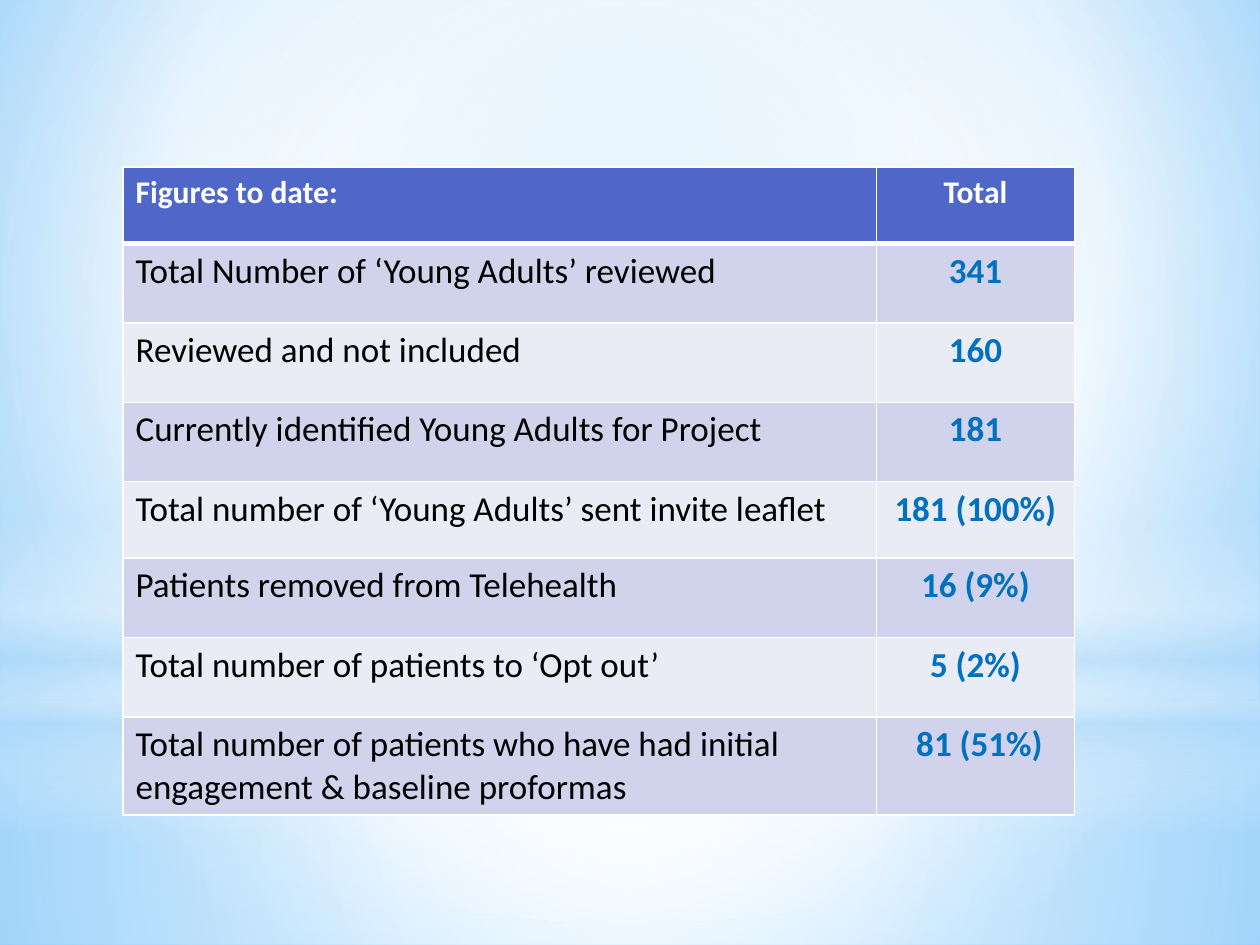
from lxml import etree
from pptx import Presentation
from pptx.dml.color import RGBColor
from pptx.enum.shapes import MSO_SHAPE
from pptx.enum.text import PP_ALIGN
from pptx.oxml import parse_xml
from pptx.oxml.ns import nsdecls, qn
from pptx.util import Cm, Pt

RECT, OVAL = MSO_SHAPE.RECTANGLE, MSO_SHAPE.OVAL
CENTER, LEFT = PP_ALIGN.CENTER, PP_ALIGN.LEFT
COLORS = {
    "white": "FFFFFF", "black": "000000", "sky": "9ED5FF", "blue": "5BB9FF",
    "pale": "B4DCFA", "header": "4E67C8", "odd": "D0D3EB", "even": "E9EBF5",
    "value": "0070C0",
}


def set_gradient(element, stops, focus):
    gs = "".join(
        f'<a:gs pos="{pos * 1000}"><a:srgbClr val="{COLORS[name]}">'
        f'<a:alpha val="{alpha * 1000}"/></a:srgbClr></a:gs>'
        for pos, name, alpha in stops)
    if focus:
        l, t, r, b = (v * 1000 for v in focus)
        shade = (f'<a:path path="circle"><a:fillToRect l="{l}" t="{t}" '
                 f'r="{r}" b="{b}"/></a:path>')
    else:
        shade = '<a:lin ang="5400000" scaled="0"/>'
    grad = parse_xml(f'<a:gradFill {nsdecls("a")} rotWithShape="1">'
                     f'<a:gsLst>{gs}</a:gsLst>{shade}</a:gradFill>')
    solid = element.find(".//" + qn("a:solidFill"))
    solid.getparent().replace(solid, grad)


def set_borders(cell, bottom):
    tcPr = cell._tc.get_or_add_tcPr()
    for i, (side, width) in enumerate(
            [("lnL", 1), ("lnR", 1), ("lnT", 1), ("lnB", bottom)]):
        ln = etree.Element(qn("a:" + side), w=str(Pt(width)))
        fill = etree.SubElement(ln, qn("a:solidFill"))
        etree.SubElement(fill, qn("a:srgbClr"), val=COLORS["white"])
        tcPr.insert(i, ln)


prs = Presentation()
prs.slide_width, prs.slide_height = Cm(25.4), Cm(19.05)
s = prs.slides.add_slide(prs.slide_layouts[6])

s.background.fill.solid()
set_gradient(s._element, [(0, "sky", 100), (60, "white", 100), (100, "blue", 100)],
             (20, 10, 20, 60))

middle = (50, 50, 50, 50)
glows = [
    (RECT, 14.17, 4.88, middle,
     [(0, "white", 91), (37, "white", 76), (100, "pale", 79)]),
    (RECT, 0, 14.17, middle,
     [(0, "white", 89), (48, "white", 62), (100, "pale", 79)]),
    (RECT, 10.46, 6.35, None,
     [(0, "white", 0), (29, "white", 30), (45, "pale", 40),
      (55, "white", 26), (65, "pale", 60), (100, "white", 0)]),
    (OVAL, 4.45, 14.17, middle, [(0, "white", 100), (56, "white", 0)]),
]
for kind, top, height, focus, stops in glows:
    sp = s.shapes.add_shape(kind, 0, Cm(top), prs.slide_width, Cm(height))
    sp.shadow.inherit = False
    sp.line.fill.background()
    sp.fill.solid()
    set_gradient(sp._element, stops, focus)

rows = [
    ("Figures to date:", "Total"),
    ("Total Number of ‘Young Adults’ reviewed", "341"),
    ("Reviewed and not included", "160"),
    ("Currently identified Young Adults for Project", "181"),
    ("Total number of ‘Young Adults’ sent invite leaflet", "181 (100%)"),
    ("Patients removed from Telehealth", "16 (9%)"),
    ("Total number of patients to ‘Opt out’", "5 (2%)"),
    ("Total number of patients who have had initial engagement & baseline proformas",
     " 81 (51%)"),
]
heights = [1.54, 1.6, 1.6, 1.6, 1.54, 1.6, 1.6, 1.6]
table = s.shapes.add_table(len(rows), 2, Cm(2.48), Cm(3.37),
                           Cm(19.18), Cm(sum(heights))).table
table.columns[0].width, table.columns[1].width = Cm(15.19), Cm(3.99)

for i, texts in enumerate(rows):
    table.rows[i].height = Cm(heights[i])
    band = "header" if i == 0 else "odd" if i % 2 else "even"
    for j, text in enumerate(texts):
        cell = table.cell(i, j)
        cell.fill.solid()
        cell.fill.fore_color.rgb = RGBColor.from_string(COLORS[band])
        set_borders(cell, 1 if i else 3)
        cell.text = text
        p = cell.text_frame.paragraphs[0]
        p.alignment = CENTER if j else LEFT
        color = "white" if i == 0 else "value" if j else "black"
        p.font.name = "Calibri"
        p.font.size = Pt(20 if i else 18)
        p.font.bold = i == 0 or j == 1
        p.font.color.rgb = RGBColor.from_string(COLORS[color])

prs.save("out.pptx")
